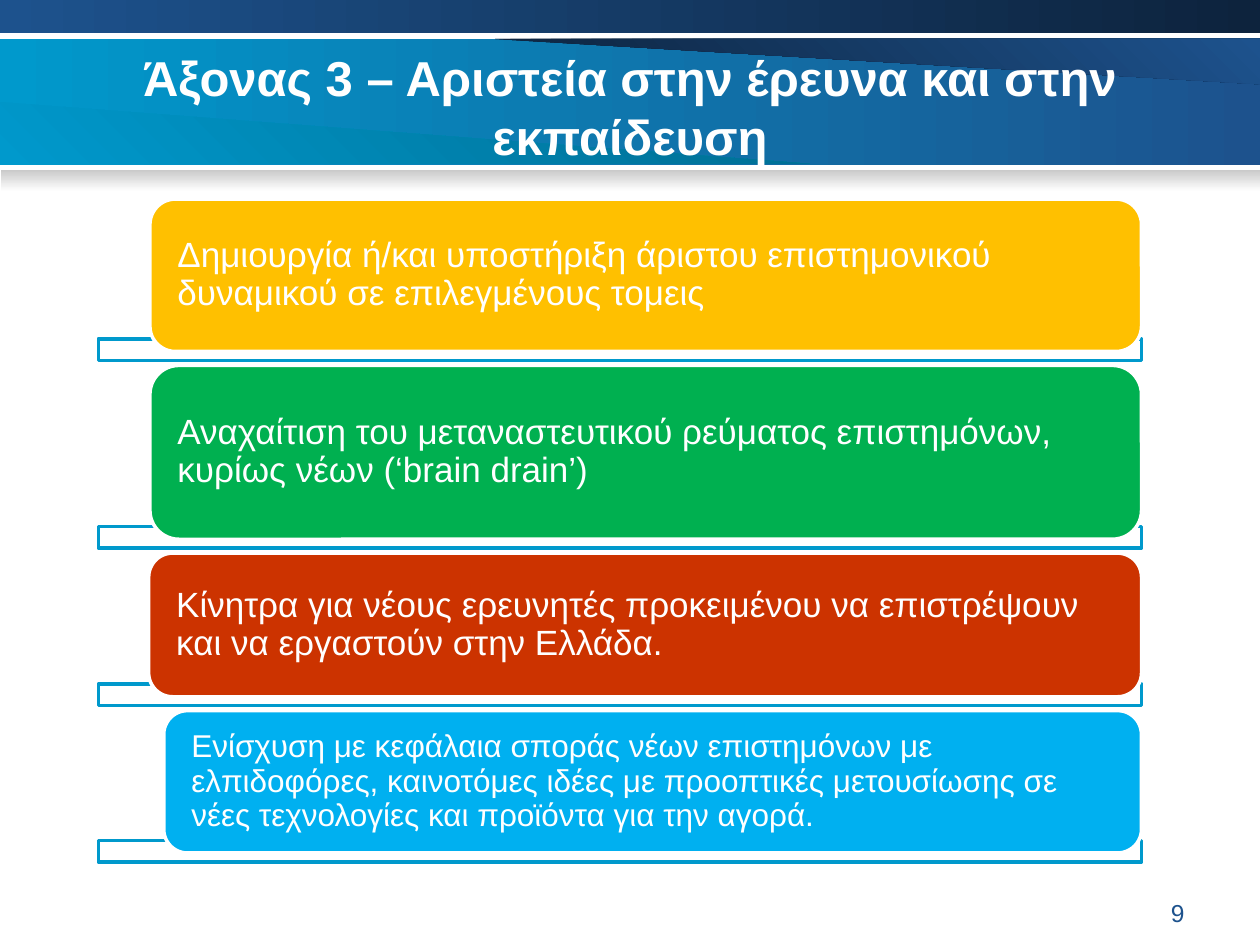
from pptx import Presentation
from pptx.dml.color import RGBColor
from pptx.enum.shapes import MSO_SHAPE
from pptx.enum.text import MSO_ANCHOR, PP_ALIGN
from pptx.util import Inches, Pt

RECT, ROUNDED = MSO_SHAPE.RECTANGLE, MSO_SHAPE.ROUNDED_RECTANGLE
LEFT, CENTER, RIGHT = PP_ALIGN.LEFT, PP_ALIGN.CENTER, PP_ALIGN.RIGHT
TOP, MIDDLE = MSO_ANCHOR.TOP, MSO_ANCHOR.MIDDLE

WHITE = RGBColor(0xFF, 0xFF, 0xFF)
SKY = RGBColor(0x00, 0x99, 0xCC)
TEAL = RGBColor(0x00, 0x6D, 0x92)
BLUE = RGBColor(0x1D, 0x52, 0x8D)
NAVY = RGBColor(0x0D, 0x23, 0x3D)
GREY = RGBColor(0xCA, 0xCA, 0xCA)
AMBER = RGBColor(0xFF, 0xC0, 0x00)
GREEN = RGBColor(0x00, 0xB0, 0x50)
RED = RGBColor(0xCC, 0x33, 0x00)
CYAN = RGBColor(0x00, 0xB0, 0xF0)

TITLE = "Άξονας 3 – Αριστεία στην έρευνα και στην εκπαίδευση"
PAGE_NUMBER = "9"
ACTIONS = [
    ("Δημιουργία ή/και υποστήριξη άριστου επιστημονικού δυναμικού σε επιλεγμένους τομεις",
     AMBER, 1.19, 1.21, 20),
    ("Αναχαίτιση του μεταναστευτικού ρεύματος επιστημόνων, κυρίως νέων (‘brain drain’)",
     GREEN, 1.19, 1.38, 20),
    ("Κίνητρα για νέους ερευνητές προκειμένου να επιστρέψουν και να εργαστούν στην Ελλάδα.",
     RED, 1.18, 1.14, 20),
    ("Ενίσχυση με κεφάλαια σποράς νέων επιστημόνων με ελπιδοφόρες, καινοτόμες ιδέες "
     "με προοπτικές μετουσίωσης σε νέες τεχνολογίες και προϊόντα για την αγορά.",
     CYAN, 1.3, 1.13, 18),
]
BANDS = [
    ((0, 0.31, 10, 1), SKY, BLUE, 0),
    ((0, 0, 10, 0.26), BLUE, NAVY, 0),
    ((0.01, 1.35, 9.99, 0.17), GREY, WHITE, 270),
]
WEDGES = [
    ([(3.93, 0.31), (10, 0.67), (10, 0.31)], NAVY, BLUE, 45),
    ([(0, 0.81), (6.43, 1.3), (0, 1.3)], SKY, TEAL, 45),
]
ACTIONS_TOP, ACTIONS_RIGHT, ACTION_GAP = 1.58, 9.06, 0.11
RAIL_LEFT, RAIL_HEIGHT, RAIL_OVERLAP = 0.78, 0.17, 0.1
TEXT_INSET, CORNER_INSET = 0.22, 0.05


def paint_gradient(shape, start, end, angle):
    shape.shadow.inherit = False
    shape.line.fill.background()
    shape.fill.gradient()
    shape.fill.gradient_angle = angle
    for stop, color in zip(shape.fill.gradient_stops, (start, end)):
        stop.color.rgb = color


def add_box(slide, preset, place, fill, line):
    box = slide.shapes.add_shape(preset, *map(Inches, place))
    box.shadow.inherit = False
    box.fill.solid()
    box.fill.fore_color.rgb = fill
    box.line.color.rgb = line
    box.line.width = Pt(2)
    return box


def write(shape, text, size, color, align, anchor, insets, bold=False):
    frame = shape.text_frame
    frame.word_wrap = True
    frame.vertical_anchor = anchor
    frame.margin_left = frame.margin_right = Inches(insets[0])
    frame.margin_top = frame.margin_bottom = Inches(insets[1])
    paragraph = frame.paragraphs[0]
    paragraph.text = text
    paragraph.alignment = align
    paragraph.font.name = "Arial"
    paragraph.font.size = Pt(size)
    paragraph.font.bold = bold
    paragraph.font.color.rgb = color
    return paragraph


def add_banner(slide):
    for place, *gradient in BANDS:
        band = slide.shapes.add_shape(RECT, *map(Inches, place))
        paint_gradient(band, *gradient)
    for corners, *gradient in WEDGES:
        points = [(Inches(x), Inches(y)) for x, y in corners]
        builder = slide.shapes.build_freeform(*points[0])
        builder.add_line_segments(points[1:], close=True)
        paint_gradient(builder.convert_to_shape(), *gradient)


def add_actions(slide):
    top = ACTIONS_TOP
    for text, color, left, height, size in ACTIONS:
        bottom = top + height
        rail = (RAIL_LEFT, bottom - RAIL_OVERLAP, ACTIONS_RIGHT - RAIL_LEFT, RAIL_HEIGHT)
        add_box(slide, RECT, rail, WHITE, SKY)
        card = add_box(slide, ROUNDED, (left, top, ACTIONS_RIGHT - left, height), color, WHITE)
        inset = TEXT_INSET - CORNER_INSET * height
        paragraph = write(card, text, size, WHITE, LEFT, MIDDLE, (inset, 0))
        paragraph.line_spacing = 0.9
        top = bottom + ACTION_GAP


def main():
    deck = Presentation()
    deck.slide_width, deck.slide_height = Inches(10), Inches(7.5)
    slide = deck.slides.add_slide(deck.slide_layouts[6])
    add_banner(slide)
    title = slide.shapes.add_textbox(*map(Inches, (0.5, 0.3, 9, 1.25)))
    write(title, TITLE, 28, WHITE, CENTER, TOP, (0.1, 0.08), bold=True)
    number = slide.shapes.add_textbox(*map(Inches, (7.17, 7.08, 2.33, 0.27)))
    write(number, PAGE_NUMBER, 14, BLUE, RIGHT, TOP, (0.1, 0.05))
    add_actions(slide)
    deck.save("out.pptx")


if __name__ == "__main__":
    main()
